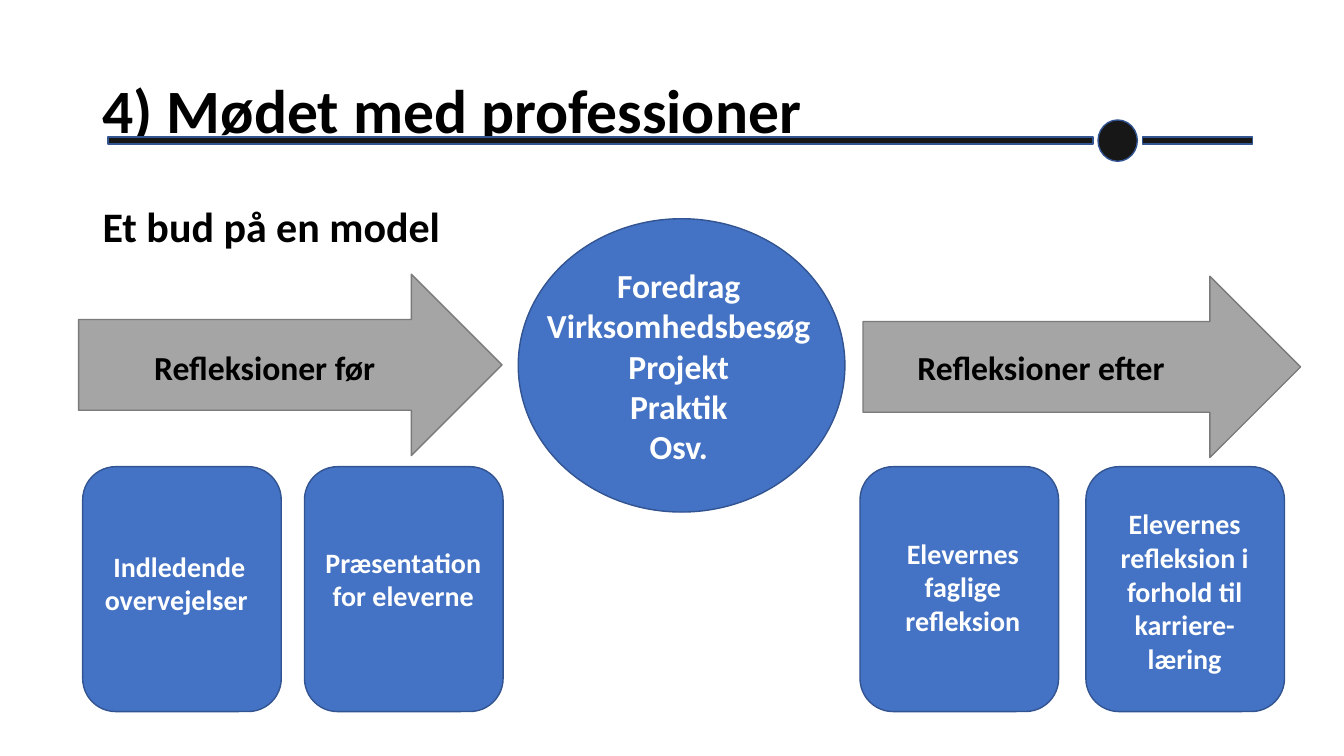
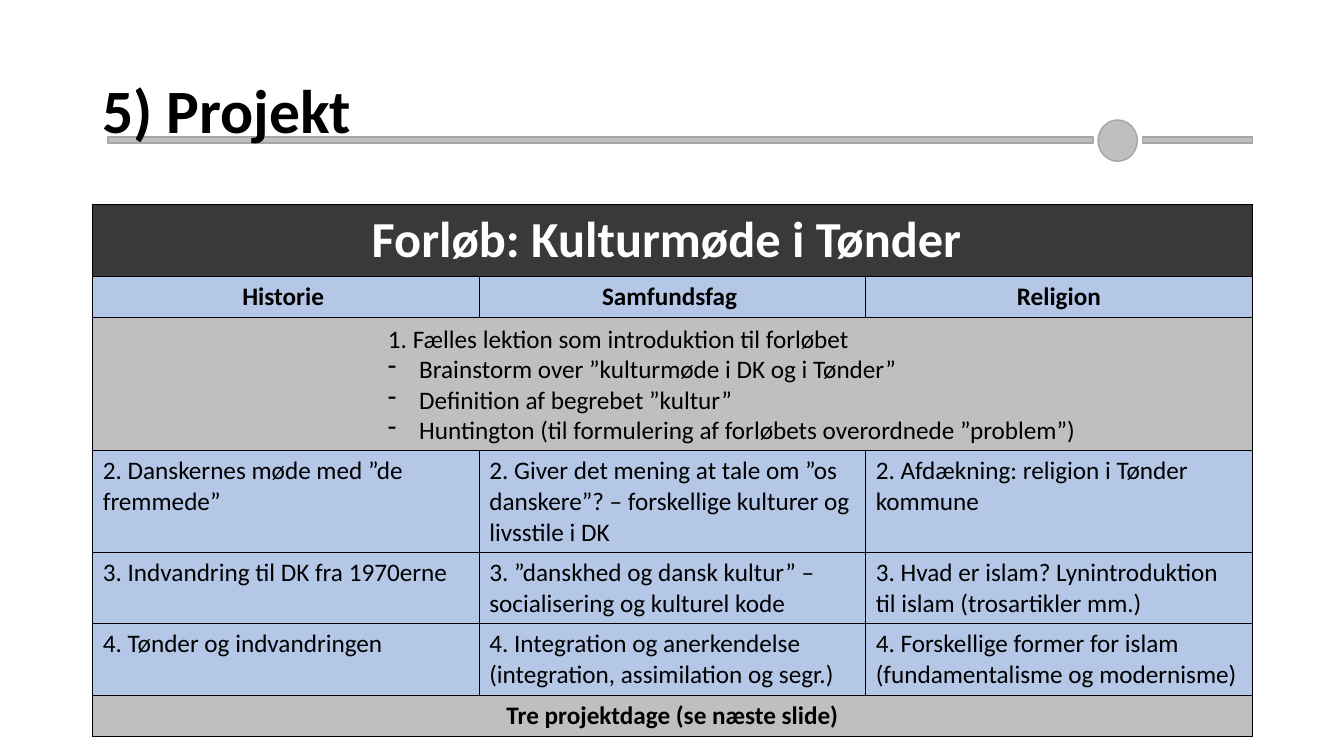
import pptx
import pptx.dml.color
import pptx.enum.shapes
import pptx.enum.text
import pptx.oxml
import pptx.oxml.ns
import pptx.util

PX = 9144
FONT = "Calibri"
BLACK = pptx.dml.color.RGBColor(0x00, 0x00, 0x00)
WHITE = pptx.dml.color.RGBColor(0xFF, 0xFF, 0xFF)
INK = pptx.dml.color.RGBColor(0x18, 0x17, 0x17)
BLUE = pptx.dml.color.RGBColor(0x44, 0x72, 0xC4)
DARK_BLUE = pptx.dml.color.RGBColor(0x32, 0x54, 0x91)
PALE_BLUE = pptx.dml.color.RGBColor(0xB4, 0xC7, 0xE7)
GRAY = pptx.dml.color.RGBColor(0xA5, 0xA5, 0xA5)
DARK_GRAY = pptx.dml.color.RGBColor(0x7A, 0x7A, 0x7A)
PALE_GRAY = pptx.dml.color.RGBColor(0xBF, 0xBF, 0xBF)
RULE_GRAY = pptx.dml.color.RGBColor(0xA6, 0xA6, 0xA6)
CHARCOAL = pptx.dml.color.RGBColor(0x3B, 0x38, 0x38)
SHAPES = pptx.enum.shapes.MSO_SHAPE
LEFT = pptx.enum.text.PP_ALIGN.LEFT
CENTER = pptx.enum.text.PP_ALIGN.CENTER
MIDDLE = pptx.enum.text.MSO_ANCHOR.MIDDLE

TITLE = {"size": 44, "bold": True, "color": BLACK, "align": LEFT, "line_spacing": 0.9}
SUBTITLE = {**TITLE, "size": 30}
ARROW_LABEL = {"size": 24, "bold": True, "color": BLACK, "align": CENTER}
CIRCLE_LABEL = {**ARROW_LABEL, "color": WHITE}
BOX_LABEL = {**CIRCLE_LABEL, "size": 20}
TABLE_HEADING = {**CIRCLE_LABEL, "size": 36}
TABLE_LABEL = {**ARROW_LABEL, "size": 18}
TABLE_BODY = {**TABLE_LABEL, "bold": False, "align": LEFT}


def write_text(text_frame, lines, style):
    text_frame.word_wrap = True
    for index, line in enumerate(lines):
        paragraph = text_frame.paragraphs[0] if index == 0 else text_frame.add_paragraph()
        paragraph.alignment = style["align"]
        paragraph.line_spacing = style.get("line_spacing", 1.0)
        run = paragraph.add_run()
        run.text = line
        font_values = {"name": FONT, "size": pptx.util.Pt(style["size"]), "bold": style["bold"]}
        for name, value in font_values.items():
            setattr(run.font, name, value)
        run.font.color.rgb = style["color"]


def add_filled_shape(slide, kind, box, fill, outline):
    shape = slide.shapes.add_shape(kind, *[length * PX for length in box])
    shape.shadow.inherit = False
    shape.fill.solid()
    shape.fill.fore_color.rgb = fill
    shape.line.color.rgb = outline
    shape.line.width = pptx.util.Pt(1)


presentation = pptx.Presentation()
presentation.slide_width = 1333 * PX
presentation.slide_height = 750 * PX
blank_layout = presentation.slide_layouts[6]

slides = []
for title, fill, outline, thickness, title_in_front in (
    ("4) Mødet med professioner", INK, DARK_BLUE, 7, False),
    ("5) Projekt", PALE_GRAY, RULE_GRAY, 6, True),
):
    slide = presentation.slides.add_slide(blank_layout)
    slides.append(slide)
    title_box = slide.shapes.add_textbox(92 * PX, 40 * PX, 1150 * PX, 145 * PX)
    title_box.text_frame.vertical_anchor = MIDDLE
    write_text(title_box.text_frame, [title], TITLE)
    for kind, box in (
        (SHAPES.RECTANGLE, (107, 136, 977, thickness)),
        (SHAPES.OVAL, (1089, 119, 39, 41)),
        (SHAPES.RECTANGLE, (1133, 136, 109, thickness)),
    ):
        add_filled_shape(slide, kind, box, fill, outline)
    if title_in_front:
        slide.shapes._spTree.append(title_box._element)

model_slide, project_slide = slides

add_filled_shape(model_slide, SHAPES.OVAL, (514, 217, 324, 291), BLUE, DARK_BLUE)
for box in ((78, 272, 420, 180), (856, 274, 434, 180)):
    add_filled_shape(model_slide, SHAPES.RIGHT_ARROW, box, GRAY, DARK_GRAY)
for left in (82, 302, 853, 1077):
    add_filled_shape(model_slide, SHAPES.ROUNDED_RECTANGLE, (left, 463, 197, 243), BLUE, DARK_BLUE)

circle_lines = ["Foredrag ", "Virksomhedsbesøg ", "Projekt ", "Praktik ", "Osv. "]
for box, lines, style in (
    ((92, 200, 400, 60), ["Et bud på en model"], SUBTITLE),
    ((529, 258, 296, 212), circle_lines, CIRCLE_LABEL),
    ((97, 339, 331, 50), ["Refleksioner før"], ARROW_LABEL),
    ((867, 339, 331, 50), ["Refleksioner efter"], ARROW_LABEL),
    ((90, 540, 176, 108), ["Indledende overvejelser "], BOX_LABEL),
    ((312, 536, 176, 108), ["Præsentation for eleverne"], BOX_LABEL),
    ((867, 527, 176, 141), ["Elevernes faglige refleksion"], BOX_LABEL),
    ((1087, 498, 176, 209), ["Elevernes refleksion i forhold til karriere-læring"], BOX_LABEL),
):
    text_box = model_slide.shapes.add_textbox(*[length * PX for length in box])
    write_text(text_box.text_frame, lines, style)

table_rows = (
    (71, CHARCOAL, TABLE_HEADING, ["Forløb: Kulturmøde i Tønder "]),
    (41, PALE_BLUE, TABLE_LABEL, ["Historie ", "Samfundsfag ", "Religion"]),
    (132, PALE_GRAY, TABLE_BODY, []),
    (101, PALE_BLUE, TABLE_BODY, [
        "2. Danskernes møde med ”de fremmede”",
        "2. Giver det mening at tale om ”os danskere”? – forskellige kulturer og livsstile i DK",
        "2. Afdækning: religion i Tønder kommune",
    ]),
    (71, PALE_BLUE, TABLE_BODY, [
        "3. Indvandring til DK fra 1970erne",
        "3. ”danskhed og dansk kultur” – socialisering og kulturel kode",
        "3. Hvad er islam? Lynintroduktion til islam (trosartikler mm.)",
    ]),
    (71, PALE_BLUE, TABLE_BODY, [
        "4. Tønder og indvandringen",
        "4. Integration og anerkendelse (integration, assimilation og segr.)",
        "4. Forskellige former for islam (fundamentalisme og modernisme)",
    ]),
    (41, PALE_GRAY, TABLE_LABEL, ["Tre projektdage (se næste slide)"]),
)
table_height = sum(row[0] for row in table_rows)
table = project_slide.shapes.add_table(
    len(table_rows), 3, 92 * PX, 203 * PX, 1150 * PX, table_height * PX
).table
for name, value in {"first_row": False, "horz_banding": False}.items():
    setattr(table, name, value)

for row_index, (height, fill, style, texts) in enumerate(table_rows):
    table.rows[row_index].height = height * PX
    if len(texts) < 3:
        table.cell(row_index, 0).merge(table.cell(row_index, 2))
    for column_index in range(3):
        cell = table.cell(row_index, column_index)
        cell.fill.solid()
        cell.fill.fore_color.rgb = fill
        properties = cell._tc.get_or_add_tcPr()
        for position, side in enumerate(("lnL", "lnR", "lnT", "lnB")):
            border = pptx.oxml.parse_xml(
                f'<a:{side} {pptx.oxml.ns.nsdecls("a")} w="12700"><a:solidFill>'
                f'<a:srgbClr val="{BLACK}"/></a:solidFill></a:{side}>'
            )
            properties.insert(position, border)
    for column_index, text in enumerate(texts):
        write_text(table.cell(row_index, column_index).text_frame, [text], style)

lesson_box = project_slide.shapes.add_textbox(375 * PX, 316 * PX, 713 * PX, 131 * PX)
write_text(lesson_box.text_frame, [
    "1. Fælles lektion som introduktion til forløbet",
    "Brainstorm over ”kulturmøde i DK og i Tønder”",
    "Definition af begrebet ”kultur”",
    "Huntington (til formulering af forløbets overordnede ”problem”)",
], TABLE_BODY)
for paragraph in lesson_box.text_frame.paragraphs[1:]:
    properties = paragraph._p.get_or_add_pPr()
    for name, value in {"marL": 31 * PX, "indent": -31 * PX}.items():
        properties.set(name, str(value))
    properties.append(pptx.oxml.parse_xml(f'<a:buChar {pptx.oxml.ns.nsdecls("a")} char="-"/>'))

presentation.save("out.pptx")
